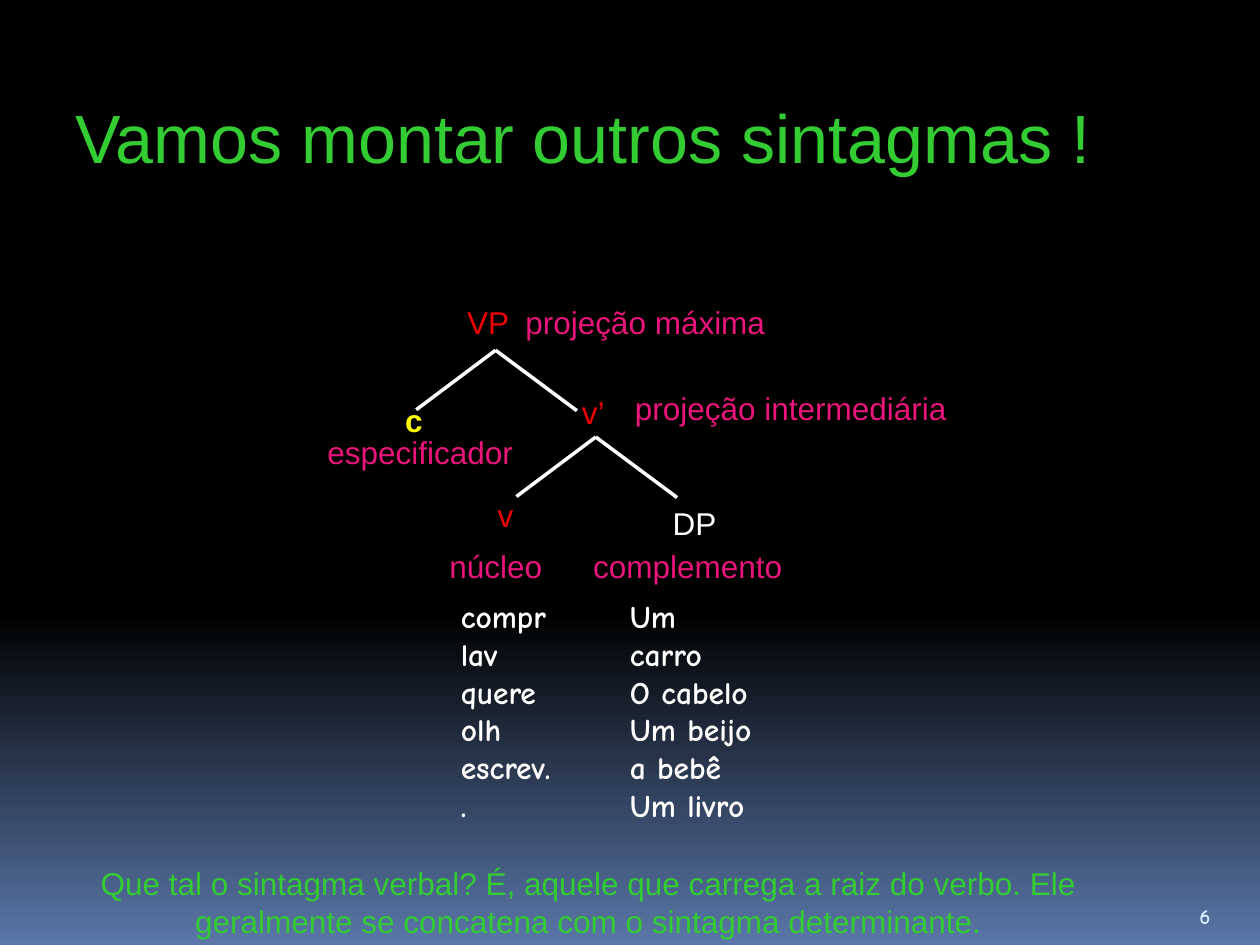
from copy import deepcopy

from lxml import etree
from pptx import Presentation
from pptx.dml.color import RGBColor
from pptx.enum.shapes import MSO_CONNECTOR
from pptx.enum.text import MSO_ANCHOR, MSO_AUTO_SIZE, PP_ALIGN
from pptx.oxml.ns import qn
from pptx.util import Cm, Pt

LINE = MSO_CONNECTOR.STRAIGHT
TOP, MIDDLE, BOTTOM = MSO_ANCHOR.TOP, MSO_ANCHOR.MIDDLE, MSO_ANCHOR.BOTTOM
LEFT, CENTER = PP_ALIGN.LEFT, PP_ALIGN.CENTER
GROW, FIXED = MSO_AUTO_SIZE.SHAPE_TO_FIT_TEXT, MSO_AUTO_SIZE.NONE

BLACK = RGBColor(0x00, 0x00, 0x00)
BLUE = RGBColor(0x5A, 0x77, 0xA9)
WHITE = RGBColor(0xFF, 0xFF, 0xFF)
GREEN = RGBColor(0x33, 0xCC, 0x33)
RED = RGBColor(0xEE, 0x02, 0x02)
YELLOW = RGBColor(0xFF, 0xFF, 0x00)
PINK = RGBColor(0xEA, 0x15, 0x7A)
PALE = RGBColor(0xD6, 0xEC, 0xFF)

SANS, COMIC = "Arial", "Comic Neue"

# All places are in centimetres.
TITLE = "Vamos montar outros sintagmas !"
NOTE = [
    "Que tal o sintagma verbal? É, aquele que carrega a raiz do verbo. Ele",
    "geralmente se concatena com o sintagma determinante.",
]
# text, left, top, width, colour, bold
NODES = [
    ("VP", 9.17, 5.99, 1.8, RED, False),
    ("c", 7.92, 7.95, 0.97, YELLOW, True),
    ("v’", 11.48, 7.8, 1.07, RED, False),
    ("v", 9.78, 9.88, 1.12, RED, False),
    ("DP", 13.31, 10.03, 1.57, WHITE, False),
]
# text, left, top, width
ROLES = [
    ("projeção máxima", 10.34, 5.99, 5.5),
    ("projeção intermediária", 12.55, 7.72, 7),
    ("especificador", 6.35, 8.61, 4.4),
    ("núcleo", 8.81, 10.9, 2.5),
    ("complemento", 11.71, 10.9, 4.4),
]
# lines, left, width
WORDS = [
    (["compr", "lav", "quere", "olh", "escrev.."], 9.04, 2.39),
    (["Um carro", "O cabelo", "Um beijo", "a bebê", "Um livro"], 12.45, 3.02),
]
FORKS = [(9.99, 7.06), (12.01, 8.81)]
LEGS = [(-1.6, 1.2), (1.64, 1.22)]


def add_text(slide, lines, box, *, color, size=18, font=SANS, bold=False,
             align=LEFT, anchor=TOP, fit=GROW):
    frame = slide.shapes.add_textbox(*map(Cm, box)).text_frame
    frame.word_wrap = True
    frame.auto_size = fit
    frame.vertical_anchor = anchor
    frame.text = "\n".join(lines)
    for para in frame.paragraphs:
        para.alignment = align
        for run in para.runs:
            run.font.name = font
            run.font.size = Pt(size)
            run.font.bold = bold
            run.font.color.rgb = color


def add_fork(slide, x, y):
    """Draw both branches that go down from one node."""
    for dx, dy in LEGS:
        leg = slide.shapes.add_connector(
            LINE, Cm(x + dx), Cm(y + dy), Cm(x), Cm(y))
        leg.line.color.rgb = WHITE
        leg.line.width = Pt(2)
        etree.SubElement(leg.element.spPr, qn("a:effectLst"))


def paint_back(slide):
    """Fade the background from black to blue, down from 65 %."""
    fill = slide.background.fill
    fill.gradient()
    fill.gradient_angle = 270
    first, last = fill.gradient_stops
    first.color.rgb, first.position = BLACK, 0
    last.color.rgb, last.position = BLUE, 1
    stop = next(slide.element.iter(qn("a:gs")))
    stop.addnext(deepcopy(stop))
    fill.gradient_stops[1].position = 0.65


def main():
    deck = Presentation()
    deck.slide_width, deck.slide_height = Cm(25.4), Cm(19.05)
    slide = deck.slides.add_slide(deck.slide_layouts[6])
    paint_back(slide)

    add_text(slide, ["6"], (23.93, 17.83, 1.27, 1.02), color=PALE, size=12,
             font=COMIC, bold=True, anchor=BOTTOM, fit=FIXED)
    add_text(slide, [TITLE], (1.27, 1.63, 22.48, 2.24), color=GREEN, size=39,
             anchor=MIDDLE, fit=FIXED)
    add_text(slide, NOTE, (0, 17.3, 23.72, 1.8), color=GREEN, align=CENTER)

    for x, y in FORKS:
        add_fork(slide, x, y)
    for text, x, y, width, color, bold in NODES:
        add_text(slide, [text], (x, y, width, 1.02), color=color, bold=bold)
    for text, x, y, width in ROLES:
        add_text(slide, [text], (x, y, width, 1.02), color=PINK)
    for lines, x, width in WORDS:
        add_text(slide, lines, (x, 11.91, width, 4.09), color=WHITE,
                 font=COMIC, bold=True)

    deck.save("out.pptx")


if __name__ == "__main__":
    main()
